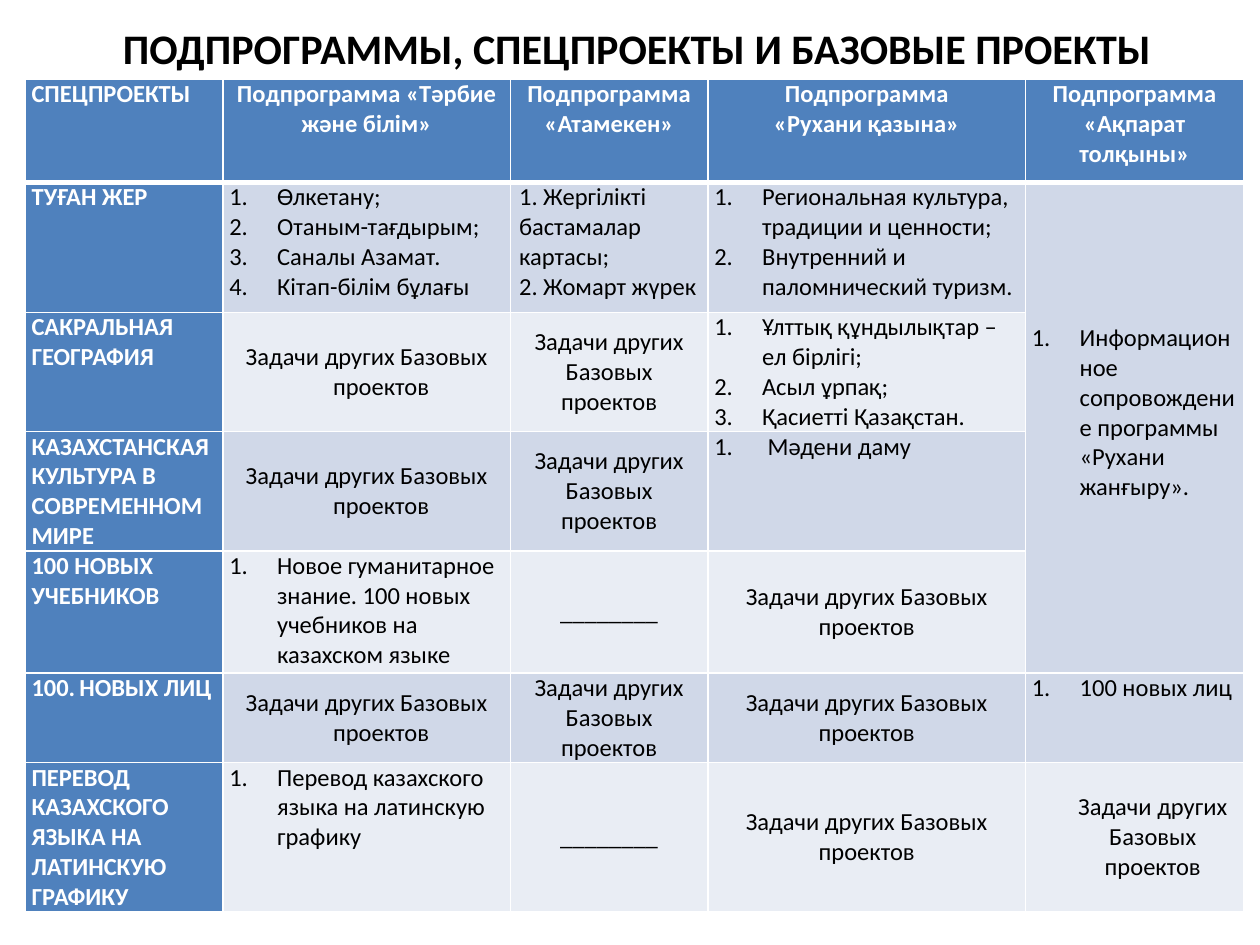
from dataclasses import dataclass

from lxml.etree import SubElement
from pptx import Presentation
from pptx.dml.color import RGBColor
from pptx.enum.text import MSO_ANCHOR, PP_ALIGN
from pptx.oxml.ns import qn
from pptx.util import Inches, Pt

BLUE = RGBColor(0x4F, 0x81, 0xBD)
BAND_DARK = RGBColor(0xD0, 0xD8, 0xE8)
BAND_LIGHT = RGBColor(0xE9, 0xED, 0xF4)
WHITE = RGBColor(0xFF, 0xFF, 0xFF)
BLACK = RGBColor(0, 0, 0)
FONT = "Calibri"


@dataclass
class Entry:
    """Content of one table cell; indents are in inches."""
    lines: list
    align: PP_ALIGN = PP_ALIGN.LEFT
    anchor: MSO_ANCHOR = MSO_ANCHOR.TOP
    left: float = 0
    first: float = 0
    start: int = 0  # first number of a numbered list, 0 for none
    bottom: float = 0


def plain(*lines, **options):
    return Entry(lines, **options)


def heading(*lines):
    return Entry(lines, align=PP_ALIGN.CENTER)


def numbered(*lines, start=1, **options):
    return Entry(lines, left=0.38, first=-0.38, start=start, **options)


def centered(text, **options):
    return Entry([text], PP_ALIGN.CENTER, MSO_ANCHOR.MIDDLE, **options)


OTHER_TASKS = "Задачи других Базовых проектов"
OTHER = centered(OTHER_TASKS)
OTHER_HANGING = centered(OTHER_TASKS, left=0.23, first=-0.23)
NONE = centered("________")

COLUMN_WIDTHS = [1.57, 2.28, 1.57, 2.52, 1.73]
ROW_HEIGHTS = [0.82, 1.03, 0.73, 0.85, 0.97, 0.37, 1.07]
ROWS = [
    [plain("СПЕЦПРОЕКТЫ"),
     heading("Подпрограмма «Тәрбие және білім»"),
     heading("Подпрограмма «Атамекен»"),
     heading("Подпрограмма", "«Рухани қазына»"),
     heading("Подпрограмма «Ақпарат толқыны»")],
    [plain("ТУҒАН ЖЕР"),
     numbered("Өлкетану;", "Отаным-тағдырым;", "Саналы Азамат.", "Кітап-білім бұлағы"),
     plain("1. Жергілікті бастамалар картасы;", "2. Жомарт жүрек", left=0.02),
     numbered("Региональная культура, традиции и ценности;",
              "Внутренний и паломнический туризм."),
     numbered("Информационное сопровождение программы «Рухани жанғыру».",
              anchor=MSO_ANCHOR.MIDDLE, bottom=0.24)],
    [plain("САКРАЛЬНАЯ ГЕОГРАФИЯ"), OTHER_HANGING, OTHER,
     numbered("Ұлттық құндылықтар – ел бірлігі;", "Асыл ұрпақ;", "Қасиетті Қазақстан."),
     None],
    [plain("КАЗАХСТАНСКАЯ КУЛЬТУРА В СОВРЕМЕННОМ МИРЕ"), OTHER_HANGING, OTHER,
     numbered(" Мәдени даму"), None],
    [plain("100 НОВЫХ УЧЕБНИКОВ"),
     numbered("Новое гуманитарное знание. 100 новых учебников на казахском языке"),
     NONE, OTHER, None],
    [numbered("НОВЫХ ЛИЦ", start=100), OTHER_HANGING, OTHER, OTHER,
     numbered("100 новых лиц")],
    [plain("ПЕРЕВОД КАЗАХСКОГО ЯЗЫКА НА ЛАТИНСКУЮ ГРАФИКУ"),
     numbered("Перевод казахского языка на латинскую графику"),
     NONE, OTHER, centered(OTHER_TASKS, left=0.29)],
]


def set_font(paragraph, size, color, bold):
    font = paragraph.font
    font.name, font.size, font.bold = FONT, Pt(size), bold
    font.color.rgb = color


def add_title(slide, text):
    title = slide.shapes.title
    title.left, title.top = Inches(0.37), Inches(0.13)
    title.width, title.height = Inches(9.37), Inches(0.5)
    title.text = text
    title.text_frame.vertical_anchor = MSO_ANCHOR.TOP
    paragraph = title.text_frame.paragraphs[0]
    paragraph.alignment = PP_ALIGN.CENTER
    set_font(paragraph, 24, BLACK, True)


def set_borders(cell, bottom_width):
    properties = cell._tc.get_or_add_tcPr()
    for side, width in (("L", 1), ("R", 1), ("T", 1), ("B", bottom_width)):
        line = SubElement(properties, qn(f"a:ln{side}"), w=str(Pt(width)))
        fill = SubElement(line, qn("a:solidFill"))
        SubElement(fill, qn("a:srgbClr"), val=str(WHITE))


def set_indent(paragraph, entry):
    properties = paragraph._p.get_or_add_pPr()
    properties.set("marL", str(Inches(entry.left)))
    properties.set("indent", str(Inches(entry.first)))
    if entry.start:
        SubElement(properties, qn("a:buFont"), typeface="+mj-lt")
        SubElement(properties, qn("a:buAutoNum"), type="arabicPeriod",
                   startAt=str(entry.start))


def fill_cell(cell, entry, is_label):
    cell.margin_left = cell.margin_right = Inches(0.05)
    cell.margin_top, cell.margin_bottom = 0, Inches(entry.bottom)
    cell.vertical_anchor = entry.anchor
    cell.text = "\n".join(entry.lines)
    for paragraph in cell.text_frame.paragraphs:
        paragraph.alignment = entry.align
        set_indent(paragraph, entry)
        set_font(paragraph, 14, WHITE if is_label else BLACK, is_label)


def add_projects_table(slide):
    table = slide.shapes.add_table(
        len(ROWS), len(COLUMN_WIDTHS), Inches(0.2), Inches(0.63),
        Inches(sum(COLUMN_WIDTHS)), Inches(sum(ROW_HEIGHTS))).table
    table.first_col = True
    for column, width in zip(table.columns, COLUMN_WIDTHS):
        column.width = Inches(width)
    for row, height in zip(table.rows, ROW_HEIGHTS):
        row.height = Inches(height)
    table.cell(1, 4).merge(table.cell(4, 4))

    for r, entries in enumerate(ROWS):
        band = BAND_DARK if r % 2 else BAND_LIGHT
        for c, entry in enumerate(entries):
            cell = table.cell(r, c)
            is_label = r == 0 or c == 0
            set_borders(cell, 3 if r == 0 else 1)
            cell.fill.solid()
            cell.fill.fore_color.rgb = BLUE if is_label else band
            if entry:
                fill_cell(cell, entry, is_label)


def main():
    presentation = Presentation()
    presentation.slide_width, presentation.slide_height = Inches(10), Inches(7.5)
    slide = presentation.slides.add_slide(presentation.slide_layouts[5])
    add_title(slide, "ПОДПРОГРАММЫ, СПЕЦПРОЕКТЫ И БАЗОВЫЕ ПРОЕКТЫ")
    add_projects_table(slide)
    presentation.save("out.pptx")


if __name__ == "__main__":
    main()
